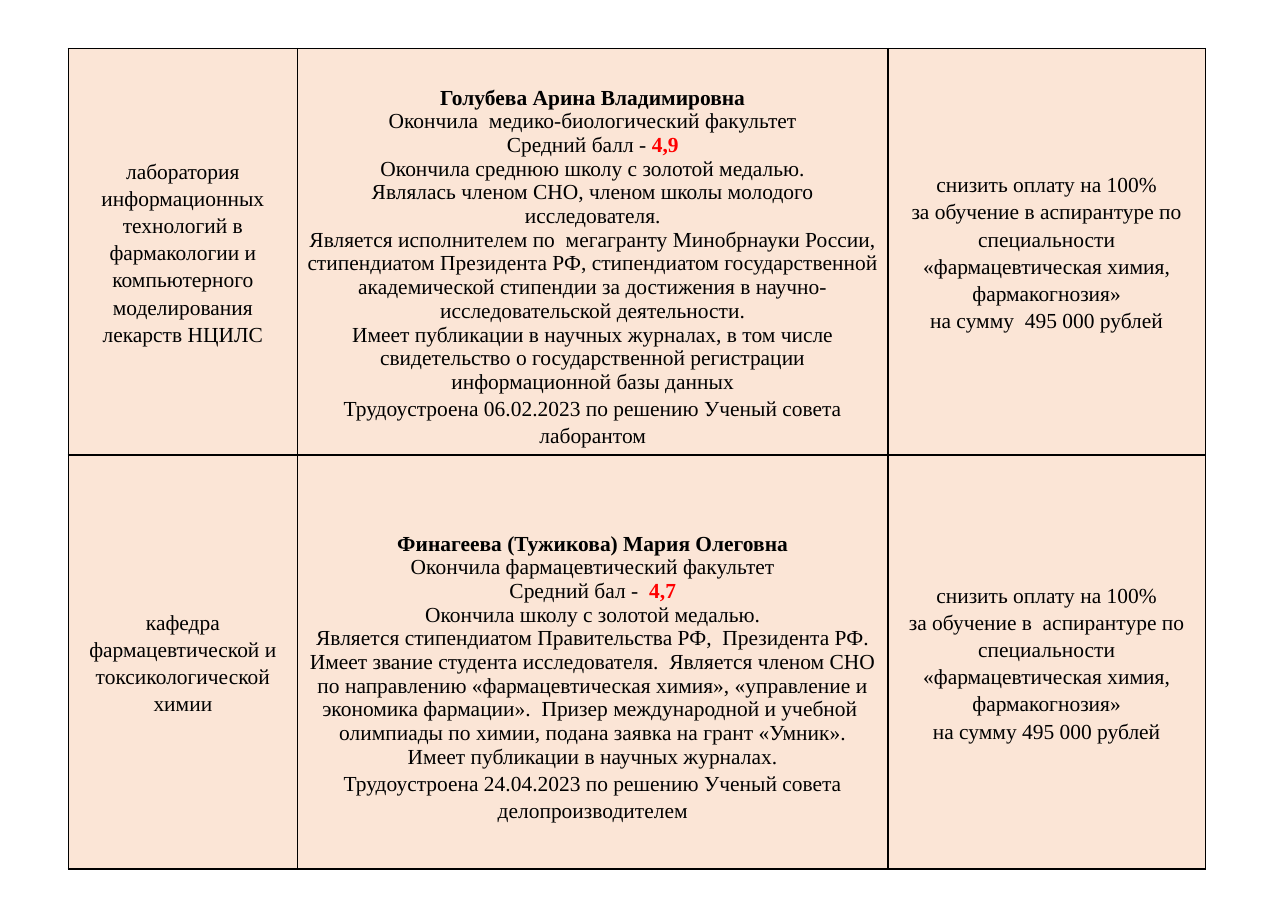
from dataclasses import dataclass

from lxml import etree
from pptx import Presentation
from pptx import util as u
from pptx.dml.color import RGBColor
from pptx.enum import text
from pptx.oxml import ns


@dataclass(frozen=True)
class Theme:
    font: str = "Times New Roman"
    size: float = 14
    ink: str = "000000"
    accent: str = "FF0000"
    cell: str = "FBE5D6"
    border: float = 1
    loose: float = 1.15
    tight: float = 1.0


theme = Theme()


def write(frame, content, spacing=theme.loose, bold=False, score=None):
    """Add a centred paragraph, optionally ending in a highlighted score."""
    para = frame.paragraphs[0] if not frame.text else frame.add_paragraph()
    para.alignment = text.PP_ALIGN.CENTER
    para.line_spacing = spacing
    spans = [(content, bold, theme.ink)]
    if score:
        spans.append((score, True, theme.accent))
    for words, heavy, colour in spans:
        span = para.add_run()
        span.text = words
        span.font.name = theme.font
        span.font.size = u.Pt(theme.size)
        span.font.bold = heavy
        span.font.color.rgb = RGBColor.from_string(colour)


def outline(cell):
    properties = cell._tc.get_or_add_tcPr()
    for index, side in enumerate(("lnL", "lnR", "lnT", "lnB")):
        line = etree.Element(ns.qn(f"a:{side}"), w=str(u.Pt(theme.border)))
        fill = etree.SubElement(line, ns.qn("a:solidFill"))
        etree.SubElement(fill, ns.qn("a:srgbClr"), val=theme.ink)
        properties.insert(index, line)


graduates = [
    {
        "department": "лаборатория информационных технологий в фармакологии и "
                      "компьютерного моделирования лекарств НЦИЛС",
        "name": "Голубева Арина Владимировна",
        "faculty": "Окончила  медико-биологический факультет",
        "score": ("Средний балл - ", "4,9"),
        "merits": [
            "Окончила среднюю школу с золотой медалью.",
            "Являлась членом СНО, членом школы молодого исследователя.",
            "Является исполнителем по  мегагранту Минобрнауки России, "
            "стипендиатом Президента РФ, стипендиатом государственной "
            "академической стипендии за достижения в "
            "научно-исследовательской деятельности.",
            "Имеет публикации в научных журналах, в том числе свидетельство "
            "о государственной регистрации информационной базы данных",
        ],
        "job": "Трудоустроена 06.02.2023 по решению Ученый совета лаборантом",
        "support": [
            "снизить оплату на 100%",
            "за обучение в аспирантуре по специальности "
            "«фармацевтическая химия, фармакогнозия»",
            "на сумму  495 000 рублей",
        ],
    },
    {
        "department": "кафедра фармацевтической и токсикологической химии",
        "name": "Финагеева (Тужикова) Мария Олеговна",
        "faculty": "Окончила фармацевтический факультет",
        "score": ("Средний бал -  ", "4,7"),
        "merits": [
            "Окончила школу с золотой медалью.",
            "Является стипендиатом Правительства РФ,  Президента РФ. "
            "Имеет звание студента исследователя.  Является членом СНО по "
            "направлению «фармацевтическая химия», «управление и экономика "
            "фармации».  Призер международной и учебной  олимпиады по химии, "
            "подана заявка на грант «Умник».",
            "Имеет публикации в научных журналах.",
        ],
        "job": "Трудоустроена 24.04.2023 по решению Ученый совета "
               "делопроизводителем",
        "support": [
            "снизить оплату на 100%",
            "за обучение в  аспирантуре по специальности "
            "«фармацевтическая химия, фармакогнозия»",
            "на сумму 495 000 рублей",
        ],
    },
]

deck = Presentation()
deck.slide_width, deck.slide_height = u.Inches(11.69), u.Inches(8.27)
page = deck.slides.add_slide(deck.slide_layouts[6])

columns = [u.Inches(width) for width in (2.08, 5.36, 2.88)]
rows = [u.Inches(height) for height in (3.69, 3.76)]
table = page.shapes.add_table(
    len(rows), len(columns), u.Inches(0.62), u.Inches(0.44),
    sum(columns), sum(rows)).table
table.first_row = table.horz_banding = False
for column, width in zip(table.columns, columns):
    column.width = width
for row, height in zip(table.rows, rows):
    row.height = height

for cell in table.iter_cells():
    cell.fill.solid()
    cell.fill.fore_color.rgb = RGBColor.from_string(theme.cell)
    cell.vertical_anchor = text.MSO_ANCHOR.MIDDLE
    cell.margin_left = cell.margin_right = u.Inches(0.05)
    cell.margin_top = cell.margin_bottom = 0
    outline(cell)

for row, graduate in zip(table.rows, graduates):
    department, profile, support = row.cells
    write(department.text_frame, graduate["department"])

    profile.margin_top = u.Inches(0.25)
    frame = profile.text_frame
    label, score = graduate["score"]
    write(frame, graduate["name"], bold=True)
    write(frame, graduate["faculty"], spacing=theme.tight)
    write(frame, label, spacing=theme.tight, score=score)
    for merit in graduate["merits"]:
        write(frame, merit, spacing=theme.tight)
    write(frame, graduate["job"])

    for line in graduate["support"]:
        write(support.text_frame, line)

deck.save("out.pptx")
